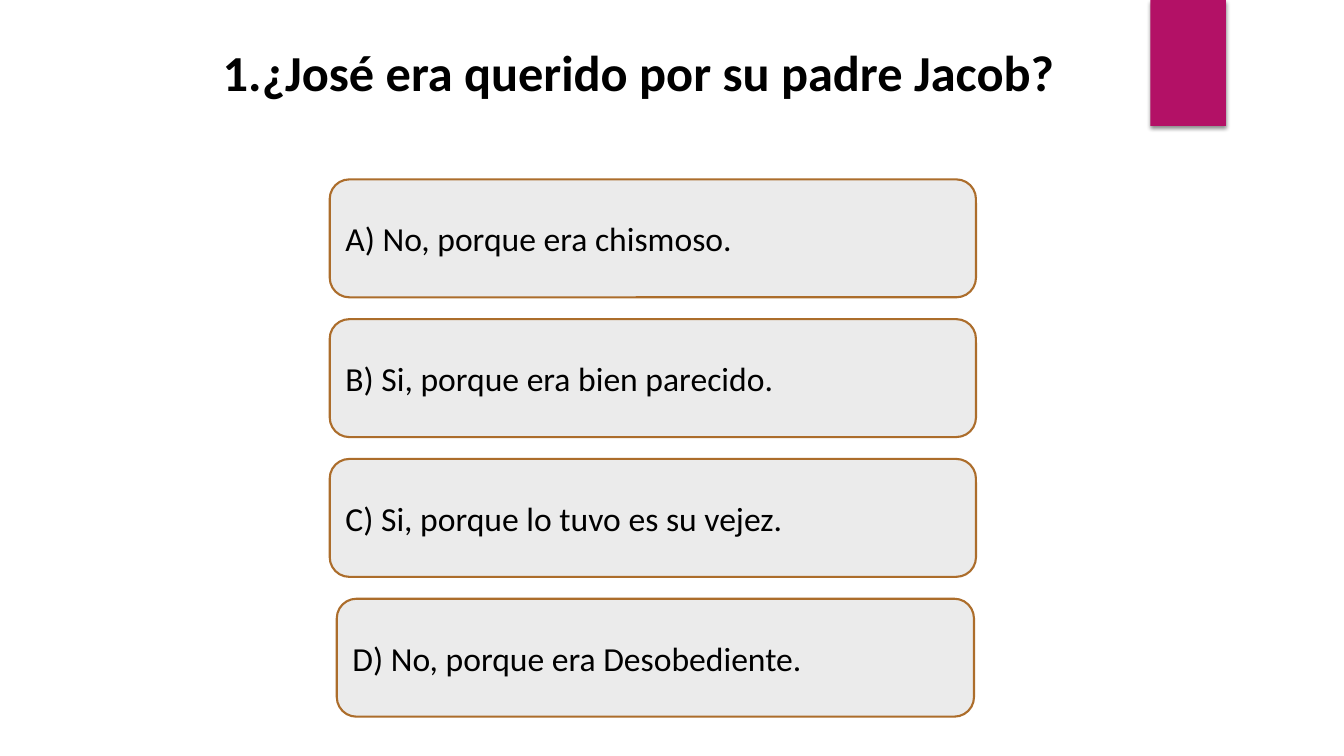
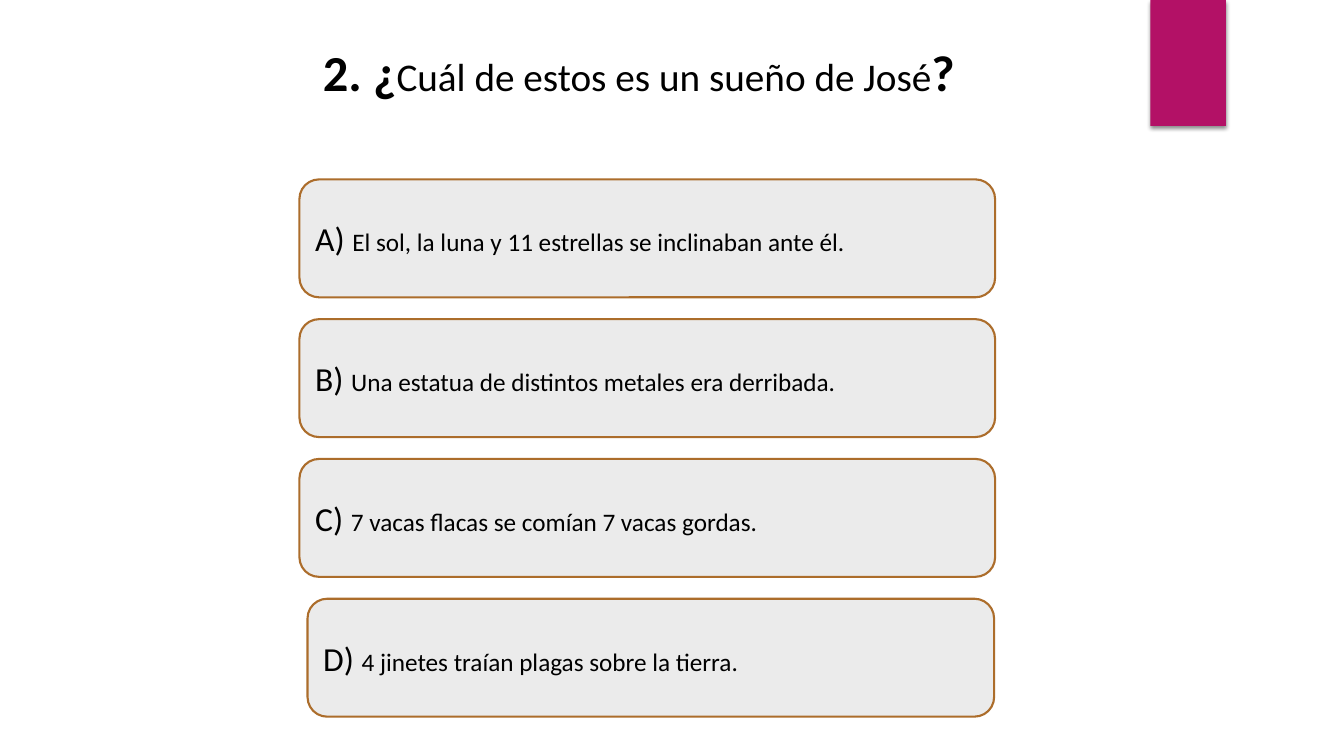
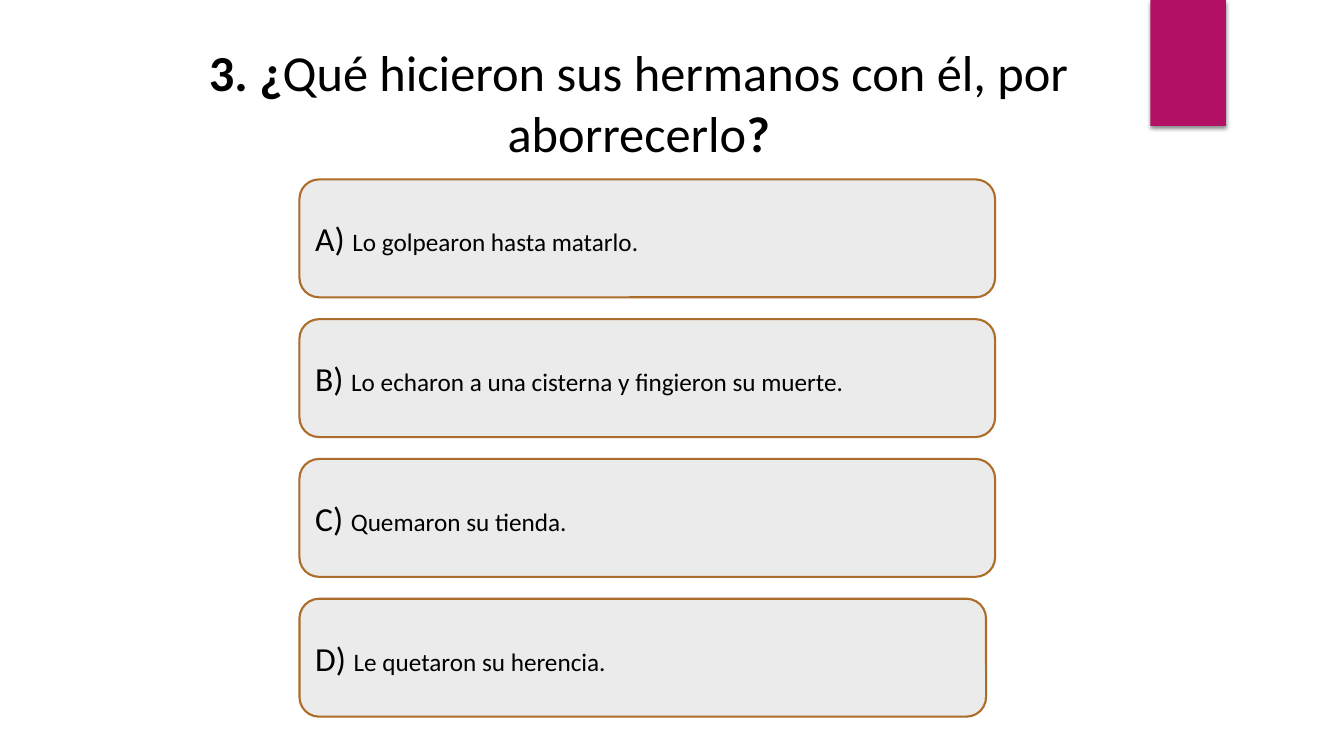
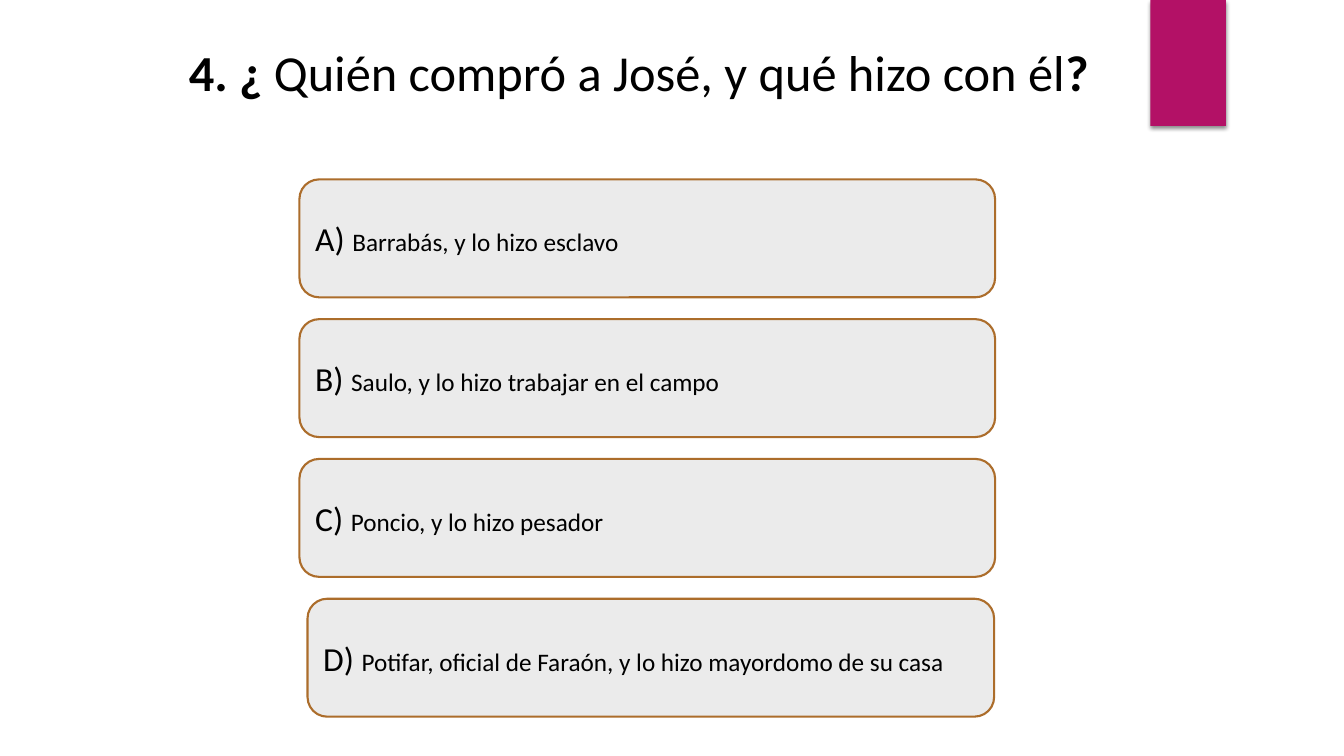
from dataclasses import dataclass

from lxml import etree
from pptx import Presentation
from pptx.dml.color import RGBColor
from pptx.enum.shapes import MSO_SHAPE
from pptx.enum.text import MSO_ANCHOR, MSO_AUTO_SIZE, PP_ALIGN
from pptx.oxml import parse_xml
from pptx.oxml.ns import nsdecls, qn
from pptx.util import Inches, Pt

RECTANGLE = MSO_SHAPE.RECTANGLE
ROUNDED = MSO_SHAPE.ROUNDED_RECTANGLE
LEFT, CENTER = PP_ALIGN.LEFT, PP_ALIGN.CENTER
TOP, MIDDLE = MSO_ANCHOR.TOP, MSO_ANCHOR.MIDDLE
GROW = MSO_AUTO_SIZE.SHAPE_TO_FIT_TEXT

MAGENTA = RGBColor(0xB3, 0x11, 0x66)
LIGHT_GRAY = RGBColor(0xEB, 0xEB, 0xEB)
BROWN = RGBColor(0xAC, 0x6D, 0x2B)
BLACK = RGBColor(0, 0, 0)
FONT = "Calibri"

TITLE_ONLY = 5
TITLE_SIZE, LETTER_SIZE = 36, 24
NUMBER_INDENT = 0.38
FIRST_TOP, LAST_TOP = 1.78, 5.94
ANSWER_HEIGHT = 1.17
LAST_NARROWING = 0.09


@dataclass
class Question:
    opening: str
    wording: str
    closing: str
    answers: tuple
    wording_size: int = TITLE_SIZE
    wording_bold: bool = False
    numbered: bool = False
    title_height: float = 1.31
    left: float = 2.97
    width: float = 6.9
    answer_size: int = 18
    last_shift: float = 0.08


QUESTIONS = (
    Question("", "¿José era querido por su padre Jacob?", "",
             ("No, porque era chismoso.",
              "Si, porque era bien parecido.",
              "Si, porque lo tuvo es su vejez.",
              "No, porque era Desobediente."),
             wording_bold=True, numbered=True, left=3.27, width=6.41,
             answer_size=LETTER_SIZE, last_shift=0.07),
    Question("2. ¿", "Cuál de estos es un sueño de José", "?",
             ("El sol, la luna y 11 estrellas se inclinaban ante él.",
              "Una estatua de distintos metales era derribada.",
              "7 vacas flacas se comían 7 vacas gordas.",
              "4 jinetes traían plagas sobre la tierra."),
             wording_size=28, title_height=0.71),
    Question("3. ¿", "Qué hicieron sus hermanos con él, por aborrecerlo", "?",
             ("Lo golpearon hasta matarlo.",
              "Lo echaron a una cisterna y fingieron su muerte.",
              "Quemaron su tienda.",
              "Le quetaron su herencia."),
             last_shift=0),
    Question("4. ¿", " Quién compró a José, y qué hizo con él", "?",
             ("Barrabás, y lo hizo esclavo",
              "Saulo, y lo hizo trabajar en el campo",
              "Poncio, y lo hizo pesador",
              "Potifar, oficial de Faraón, y lo hizo mayordomo de su casa")),
)


def add_run(paragraph, text, size, bold=False):
    run = paragraph.add_run()
    run.text = text
    run.font.name = FONT
    run.font.size = Pt(size)
    run.font.bold = bold
    run.font.color.rgb = BLACK


def add_band_to_layout(slide, layout):
    """Draw the corner band on a slide, then move it to the shared layout."""
    band = slide.shapes.add_shape(RECTANGLE, Inches(11.41), 0,
                                  Inches(0.75), Inches(1.25))
    band.fill.solid()
    band.fill.fore_color.rgb = MAGENTA
    band.line.fill.background()
    band.element.spPr.append(parse_xml(
        f'<a:effectLst {nsdecls("a")}>'
        f'<a:outerShdw blurRad="{Pt(3)}" dist="{Pt(2)}" dir="5400000" rotWithShape="0">'
        '<a:srgbClr val="000000"><a:alpha val="45000"/></a:srgbClr>'
        '</a:outerShdw></a:effectLst>'))
    layout.element.cSld.spTree.append(band.element)


def number_paragraph(paragraph):
    properties = paragraph._p.get_or_add_pPr()
    properties.set("marL", str(Inches(NUMBER_INDENT)))
    properties.set("indent", str(-Inches(NUMBER_INDENT)))
    etree.SubElement(properties, qn("a:buFont"), typeface=FONT)
    etree.SubElement(properties, qn("a:buAutoNum"), type="arabicPeriod")


def set_title(slide, question):
    title = slide.shapes.title
    title.left, title.top = Inches(1.6), Inches(0.36)
    title.width, title.height = Inches(9.47), Inches(question.title_height)
    frame = title.text_frame
    frame.word_wrap = True
    frame.auto_size = GROW
    frame.vertical_anchor = TOP
    paragraph = frame.paragraphs[0]
    paragraph.alignment = CENTER
    if question.numbered:
        number_paragraph(paragraph)
    for text, size, bold in (
            (question.opening, TITLE_SIZE, True),
            (question.wording, question.wording_size, question.wording_bold),
            (question.closing, TITLE_SIZE, True)):
        if text:
            add_run(paragraph, text, size, bold)


def add_answer(slide, letter, answer, size, left, top, width):
    box = slide.shapes.add_shape(ROUNDED, Inches(left), Inches(top),
                                 Inches(width), Inches(ANSWER_HEIGHT))
    box.shadow.inherit = False
    box.fill.solid()
    box.fill.fore_color.rgb = LIGHT_GRAY
    box.line.color.rgb = BROWN
    box.line.width = Pt(1.5)
    frame = box.text_frame
    frame.word_wrap = True
    frame.vertical_anchor = MIDDLE
    paragraph = frame.paragraphs[0]
    paragraph.alignment = LEFT
    add_run(paragraph, f"{letter}) ", LETTER_SIZE)
    add_run(paragraph, answer, size)


def add_answers(slide, question):
    last = len(question.answers) - 1
    pitch = (LAST_TOP - FIRST_TOP) / last
    for index, (letter, answer) in enumerate(zip("ABCD", question.answers)):
        left, width = question.left, question.width
        if index == last:
            left += question.last_shift
            width -= LAST_NARROWING
        add_answer(slide, letter, answer, question.answer_size,
                   left, FIRST_TOP + index * pitch, width)


def main():
    deck = Presentation()
    deck.slide_width, deck.slide_height = Inches(13.33), Inches(7.5)
    layout = deck.slide_layouts[TITLE_ONLY]
    for question in QUESTIONS:
        slide = deck.slides.add_slide(layout)
        set_title(slide, question)
        add_answers(slide, question)
    add_band_to_layout(deck.slides[0], layout)
    deck.save("out.pptx")


if __name__ == "__main__":
    main()
